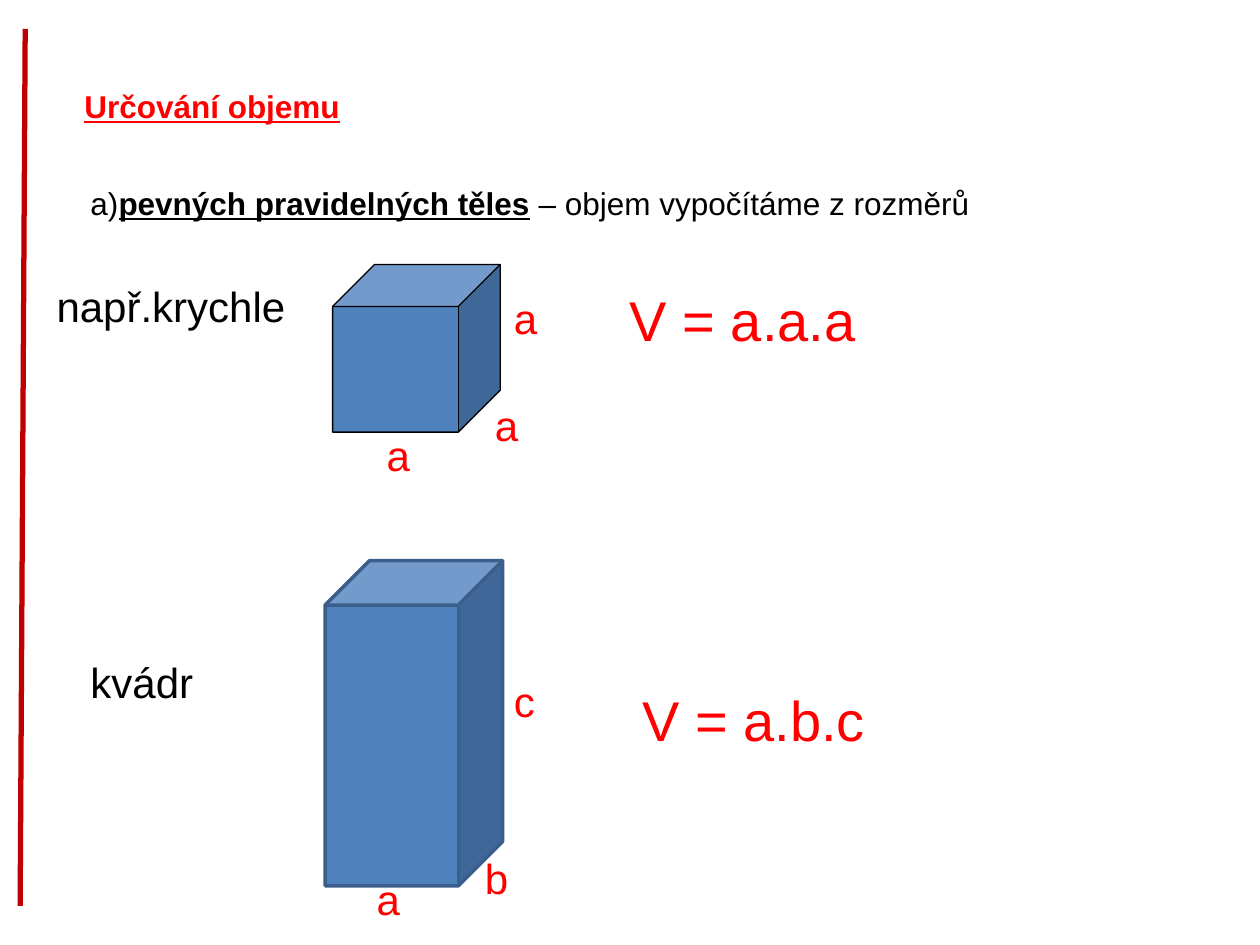
from lxml import etree
from pptx import Presentation
from pptx.dml.color import RGBColor
from pptx.enum.shapes import MSO_CONNECTOR as Connector, MSO_SHAPE as Shape
from pptx.enum.text import MSO_ANCHOR as Anchor, MSO_AUTO_SIZE as AutoSize, PP_ALIGN as Align
from pptx.oxml.ns import qn
from pptx.util import Inches, Pt

COLORS = {
    "red": "FF0000",
    "black": "000000",
    "bar": "C00000",
    "solid": "4F81BD",
    "edge": "3A5F8C",
}
FONT = "Arial"
LABEL_SIZE = 24
FORMULA_SIZE = 32
TEXT_SIZE = 18


def color(name):
    return RGBColor.from_string(COLORS[name])


def add_span(para, text, size, shade, strong=False):
    span = para.add_run()
    span.text = text
    span.font.name = FONT
    span.font.size = Pt(size)
    span.font.bold = strong
    span.font.underline = strong
    span.font.color.rgb = color(shade)


def add_title(page, text, left, top, width, height):
    title = page.shapes.title
    title.left, title.top = Inches(left), Inches(top)
    title.width, title.height = Inches(width), Inches(height)
    frame = title.text_frame
    frame.word_wrap = True
    frame.auto_size = AutoSize.NONE
    frame.vertical_anchor = Anchor.TOP
    para = frame.paragraphs[0]
    para.alignment = Align.LEFT
    add_span(para, text, TEXT_SIZE, "red", strong=True)


def add_text(page, spans, left, top, width, height, size, shade):
    box = page.shapes.add_textbox(Inches(left), Inches(top), Inches(width), Inches(height))
    box.text_frame.word_wrap = True
    para = box.text_frame.paragraphs[0]
    for text, strong in spans:
        add_span(para, text, size, shade, strong)


def add_label(page, text, left, top, width=0.39, shade="red"):
    add_text(page, [(text, False)], left, top, width, 0.5, LABEL_SIZE, shade)


def add_formula(page, text, left, top):
    add_text(page, [(text, False)], left, top, 2.01, 0.64, FORMULA_SIZE, "red")


def add_solid(page, left, top, width, height, edge, weight):
    solid = page.shapes.add_shape(
        Shape.CUBE, Inches(left), Inches(top), Inches(width), Inches(height)
    )
    solid.adjustments[0] = 0.25
    solid.shadow.inherit = False
    solid.fill.solid()
    solid.fill.fore_color.rgb = color("solid")
    solid.line.color.rgb = color(edge)
    solid.line.width = Pt(weight)


def add_side_bar(page, start, end):
    bar = page.shapes.add_connector(Connector.STRAIGHT, *map(Inches, start + end))
    bar.line.color.rgb = color("bar")
    bar.line.width = Pt(3)
    etree.SubElement(bar.element.spPr, qn("a:effectLst"))


def main():
    deck = Presentation()
    deck.slide_width, deck.slide_height = Inches(10), Inches(7.5)
    page = deck.slides.add_slide(deck.slide_layouts[5])

    add_title(page, "Určování objemu", 0.57, 0.64, 3.36, 0.57)
    intro = [
        ("a)", False),
        ("pevných pravidelných těles", True),
        (" – objem vypočítáme z rozměrů", False),
    ]
    add_text(page, intro, 0.62, 1.41, 7.24, 0.4, TEXT_SIZE, "black")

    add_solid(page, 2.64, 2.1, 1.33, 1.33, "black", 0.75)
    add_solid(page, 2.58, 4.45, 1.41, 2.58, "edge", 2)

    add_label(page, "např.krychle", 0.35, 2.18, 2.09, "black")
    add_label(page, "kvádr", 0.62, 5.16, 1.56, "black")

    edge_labels = [
        ("a", 2.97, 3.36),
        ("a", 3.98, 2.27),
        ("a", 3.83, 3.12),
        ("a", 2.89, 6.88),
        ("c", 3.98, 5.31),
        ("b", 3.75, 6.72),
    ]
    for text, left, top in edge_labels:
        add_label(page, text, left, top)

    add_formula(page, "V = a.a.a", 4.9, 2.22)
    add_formula(page, "V = a.b.c", 5, 5.39)
    add_side_bar(page, (0.2, 0.23), (0.16, 7.19))

    deck.save("out.pptx")


if __name__ == "__main__":
    main()
